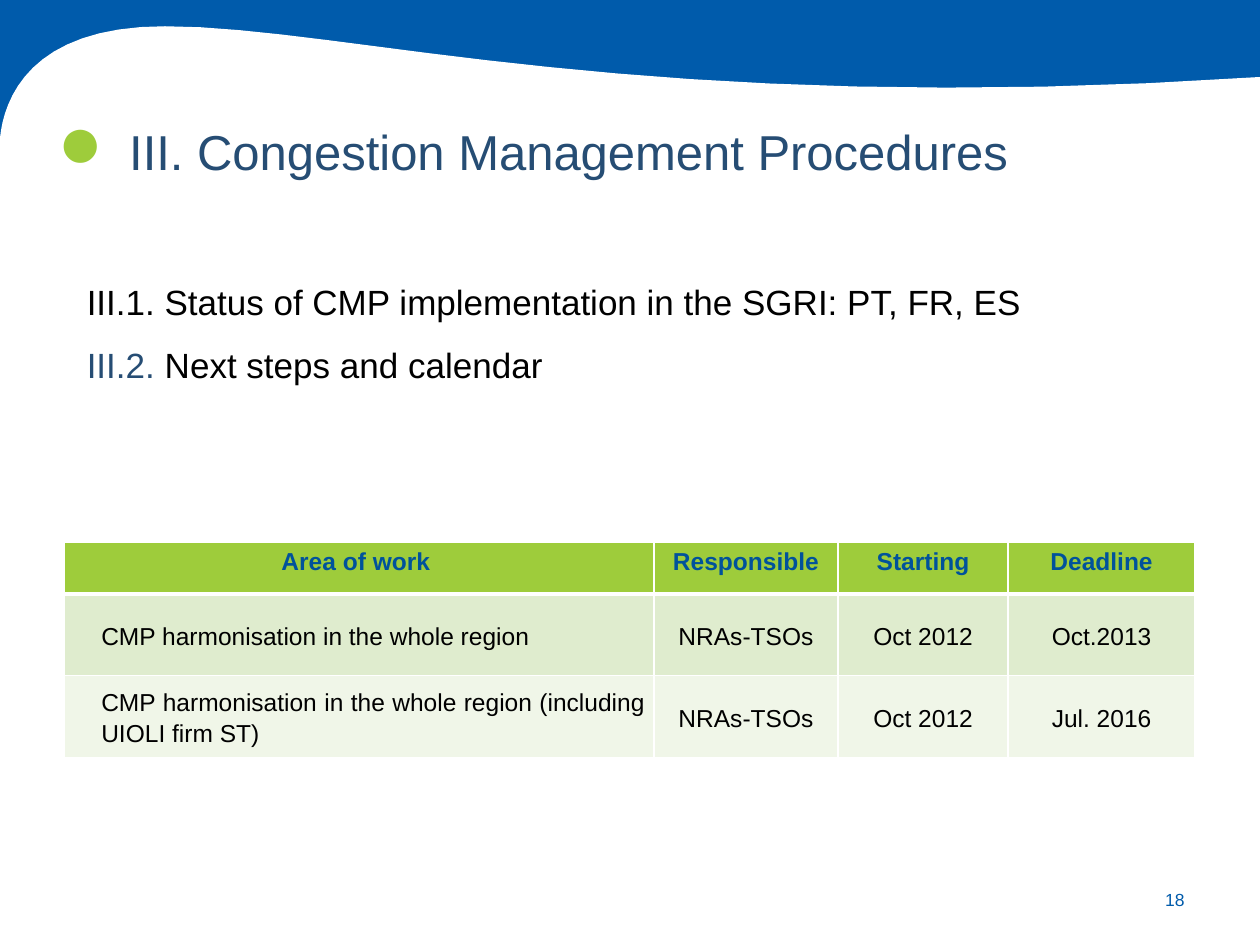
import pptx
import pptx.dml.color
import pptx.enum.shapes
import pptx.enum.text
import pptx.oxml
import pptx.oxml.ns
import pptx.util

Pt = pptx.util.Pt
RGBColor = pptx.dml.color.RGBColor
ALIGN = pptx.enum.text.PP_ALIGN
ANCHOR = pptx.enum.text.MSO_ANCHOR

WHITE = RGBColor(0xFF, 0xFF, 0xFF)
BLUE = RGBColor(0x00, 0x5B, 0xAB)
NAVY = RGBColor(0x26, 0x4D, 0x74)
HEAD_BLUE = RGBColor(0x00, 0x52, 0x9B)
GREEN = RGBColor(0x9E, 0xCC, 0x3B)
ROW_FILLS = [RGBColor(0xDF, 0xEC, 0xCE), RGBColor(0xF0, 0xF6, 0xE8)]
BLACK = RGBColor(0, 0, 0)

FONT = "Arial"
WIDTH, HEIGHT = 720, 540
COLUMNS = [336.8, 105.2, 97.2, 106.8]
ROWS = [29.5, 46.7, 46.7]
TABLE = [
    ["Area of work ", "Responsible", "Starting", "Deadline"],
    ["CMP harmonisation in the whole region ", "NRAs-TSOs", "Oct 2012", "Oct.2013"],
    ["CMP harmonisation in the whole region (including UIOLI firm ST)",
     "NRAs-TSOs", "Oct 2012", "Jul. 2016"],
]


def style(r, size, color, bold=False):
    r.font.name = FONT
    r.font.size = Pt(size)
    r.font.color.rgb = color
    r.font.bold = bold


def place(sp, box):
    sp.left, sp.top, sp.width, sp.height = [Pt(v) for v in box]


def paint(sp, color):
    sp.shadow.inherit = False
    sp.fill.solid()
    sp.fill.fore_color.rgb = color
    sp.line.fill.background()


def indent(p, points):
    p._p.get_or_add_pPr().set("marL", str(Pt(points)))


def add_label(s, box, text, size, color, align, anchor, wrap=True):
    sp = s.shapes.add_textbox(*[Pt(v) for v in box])
    tf = sp.text_frame
    tf.word_wrap = wrap
    tf.vertical_anchor = anchor
    p = tf.paragraphs[0]
    p.text = text
    p.alignment = align
    style(p.runs[0], size, color)


def bezier(a, b, c, d, steps=16):
    points = []
    for i in range(1, steps + 1):
        t = i / steps
        u = 1 - t
        points.append(tuple(
            u**3 * a[k] + 3 * u * u * t * b[k] + 3 * u * t * t * c[k] + t**3 * d[k]
            for k in (0, 1)))
    return points


def add_band(s, box):
    rect = pptx.enum.shapes.MSO_SHAPE.RECTANGLE
    paint(s.shapes.add_shape(rect, *[Pt(v) for v in box]), BLUE)


def add_page(s, box):
    x, y, w, h = box
    right, crest, left = (w, 29), (94.3, 0), (0, 64)
    outline = [(w, h), right]
    outline += bezier(right, (367.2, 52.6), (198.7, 0), crest)
    outline += bezier(crest, (16.6, 0), (2.2, 42), left)
    fb = s.shapes.build_freeform(Pt(x), Pt(y + h), scale=1.0)
    fb.add_line_segments([(Pt(x + px), Pt(y + py)) for px, py in outline])
    paint(fb.convert_to_shape(), WHITE)


def add_title(s, box):
    sp = s.shapes.title
    place(sp, box)
    tf = sp.text_frame
    tf.text = "III. Congestion Management Procedures"
    tf.word_wrap = True
    tf.auto_size = pptx.enum.text.MSO_AUTO_SIZE.NONE
    tf.vertical_anchor = ANCHOR.TOP
    p = tf.paragraphs[0]
    p.alignment = ALIGN.LEFT
    p.line_spacing = 1.2
    indent(p, 7)
    style(p.runs[0], 28, NAVY)


def add_agenda(s, box):
    sp = s.shapes.add_textbox(*[Pt(v) for v in box])
    tf = sp.text_frame
    tf.word_wrap = True
    lines = [
        [("III.1. Status of CMP implementation in the SGRI: PT, FR, ES", BLACK)],
        [("III.2. ", NAVY), ("Next steps and calendar", BLACK)],
    ]
    for i, line in enumerate(lines):
        p = tf.add_paragraph() if i else tf.paragraphs[0]
        p.line_spacing = 1.5 if i else 1.0
        for text, color in line:
            r = p.add_run()
            r.text = text
            style(r, 20, color)


def add_borders(cell, bottom):
    props = cell._tc.get_or_add_tcPr()
    sides = [("lnL", 1), ("lnR", 1), ("lnT", 1), ("lnB", bottom)]
    for i, (side, width) in enumerate(sides):
        props.insert(i, pptx.oxml.parse_xml(
            f'<a:{side} {pptx.oxml.ns.nsdecls("a")} w="{Pt(width)}"><a:solidFill>'
            f'<a:srgbClr val="{WHITE}"/></a:solidFill></a:{side}>'))


def add_schedule(s, box):
    table = s.shapes.add_table(len(ROWS), len(COLUMNS), *[Pt(v) for v in box]).table
    for column, width in zip(table.columns, COLUMNS):
        column.width = Pt(width)
    for i, height in enumerate(ROWS):
        table.rows[i].height = Pt(height)
        for j, text in enumerate(TABLE[i]):
            cell = table.cell(i, j)
            cell.text = text
            cell.fill.solid()
            cell.fill.fore_color.rgb = ROW_FILLS[i - 1] if i else GREEN
            add_borders(cell, 1 if i else 3)
            p = cell.text_frame.paragraphs[0]
            p.alignment = ALIGN.CENTER
            if i:
                cell.vertical_anchor = ANCHOR.MIDDLE
                cell.margin_left = cell.margin_right = Pt(5)
                cell.margin_top = cell.margin_bottom = 0
                p.line_spacing = 1.15
                if j == 0:
                    p.alignment = ALIGN.JUSTIFY
                    indent(p, 16)
            style(p.runs[0], 14, BLACK if i else HEAD_BLUE, bold=i == 0)


def main():
    prs = pptx.Presentation()
    prs.slide_width, prs.slide_height = Pt(WIDTH), Pt(HEIGHT)
    s = prs.slides.add_slide(prs.slide_layouts[5])
    add_band(s, (0, 0, WIDTH, 83))
    add_page(s, (0, 15, WIDTH, HEIGHT - 15))
    add_label(s, (643.7, 499.7, 40.3, 28.8), "18", 10, BLUE, ALIGN.RIGHT, ANCHOR.MIDDLE)
    add_label(s, (26, 41, 39.6, 67.7), "●", 44, GREEN, ALIGN.CENTER, ANCHOR.BOTTOM,
              wrap=False)
    add_title(s, (59.6, 59, 561.6, 96.5))
    add_agenda(s, (42.5, 156.9, 601.2, 67.7))
    add_schedule(s, (36.9, 309.9, sum(COLUMNS), sum(ROWS)))
    title = s.shapes.title._element
    title.getparent().append(title)
    prs.save("out.pptx")


if __name__ == "__main__":
    main()
